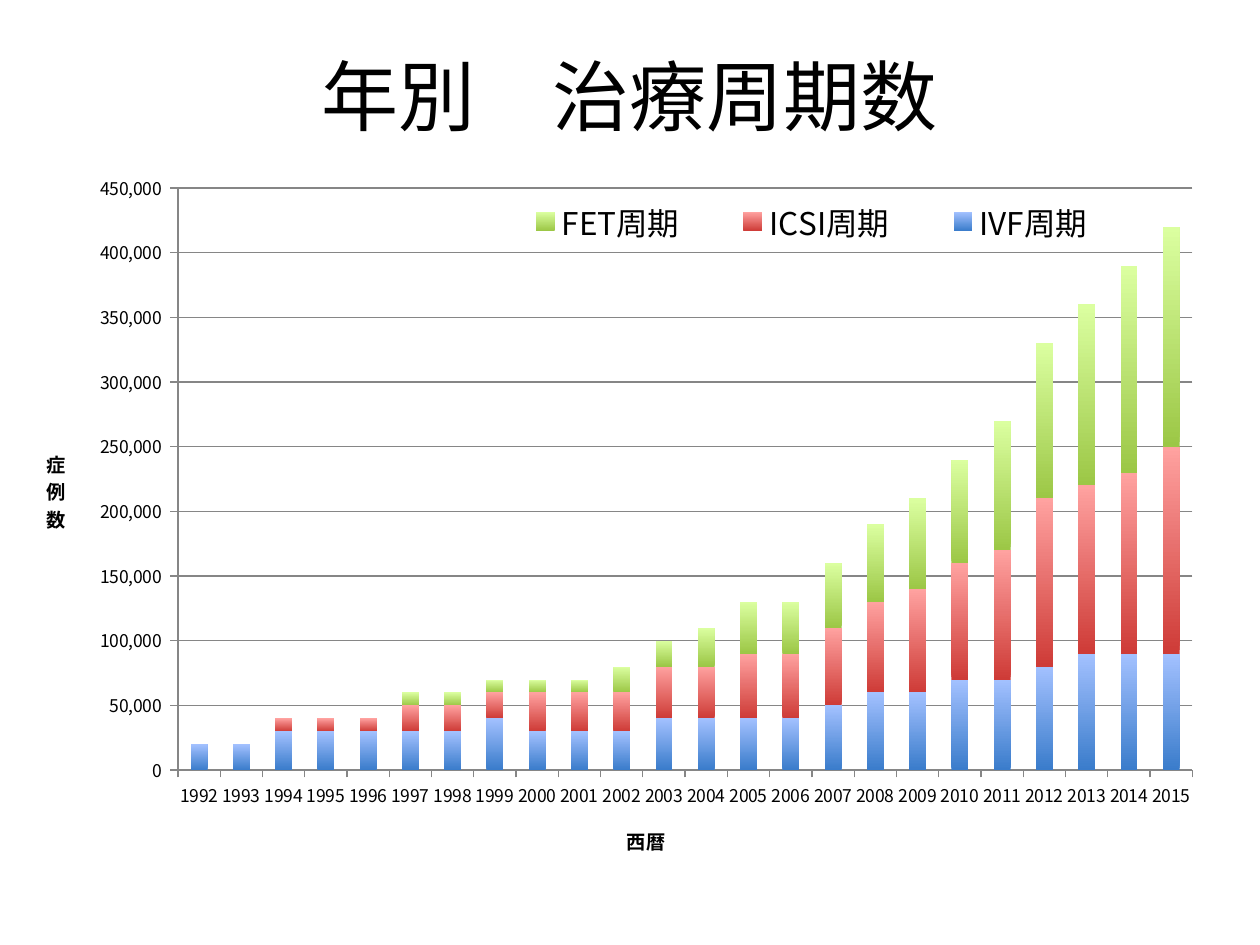
import pptx
import pptx.chart.data
import pptx.dml.color
import pptx.enum.chart
import pptx.enum.text
import pptx.oxml
import pptx.oxml.ns
import pptx.util
from lxml import etree

HEAD = "年別　治療周期数"
FACE = "Noto Sans CJK JP"
COLORS = {"text": "000000", "line": "868686"}
YEARS = [str(year) for year in range(1992, 2016)]
UNIT = 10000
SERIES = [
    ("IVF周期", "3A7CCB", "A3C1FF",
     [2, 2, 3, 3, 3, 3, 3, 4, 3, 3, 3, 4,
      4, 4, 4, 5, 6, 6, 7, 7, 8, 9, 9, 9]),
    ("ICSI周期", "CE3B37", "FFA2A0",
     [0, 0, 1, 1, 1, 2, 2, 2, 3, 3, 3, 4,
      4, 5, 5, 6, 7, 8, 9, 10, 13, 13, 14, 16]),
    ("FET周期", "9CC746", "DBFFA0",
     [0, 0, 0, 0, 0, 1, 1, 1, 1, 1, 2, 2,
      3, 4, 4, 5, 6, 7, 8, 10, 12, 14, 16, 17]),
]
TITLES = {"cat": ("西暦", 0.495, 0.947), "val": ("症例数", 0.001, 0.404)}

qn = pptx.oxml.ns.qn


def rgb(name):
    return pptx.dml.color.RGBColor.from_string(COLORS.get(name, name))


def style(font, size, bold=False):
    font.size = pptx.util.Pt(size)
    font.bold = bold
    font.name = FACE
    font.color.rgb = rgb("text")
    east = etree.SubElement(font._rPr, qn("a:ea"))
    east.set("typeface", FACE)


def place(parent, index, inner=False, **spots):
    for old in parent.findall(qn("c:layout")):
        parent.remove(old)
    layout = etree.Element(qn("c:layout"))
    manual = etree.SubElement(layout, qn("c:manualLayout"))
    if inner:
        etree.SubElement(manual, qn("c:layoutTarget")).set("val", "inner")
    for key in ("x", "y"):
        etree.SubElement(manual, qn(f"c:{key}Mode")).set("val", "edge")
    for key, spot in spots.items():
        etree.SubElement(manual, qn(f"c:{key}")).set("val", str(spot))
    parent.insert(index, layout)


def add_head(slide):
    box = slide.shapes.add_textbox(*map(pptx.util.Inches, (0.5, 0.3, 9, 0.91)))
    frame = box.text_frame
    frame.word_wrap = True
    frame.vertical_anchor = pptx.enum.text.MSO_ANCHOR.MIDDLE
    para = frame.paragraphs[0]
    para.alignment = pptx.enum.text.PP_ALIGN.CENTER
    run = para.add_run()
    run.text = HEAD
    style(run.font, 44)


def set_axis(axis, label, x, y):
    axis.format.line.color.rgb = rgb("line")
    axis.format.line.width = pptx.util.Pt(0.75)
    axis.major_tick_mark = pptx.enum.chart.XL_TICK_MARK.OUTSIDE
    style(axis.tick_labels.font, 10)
    frame = axis.axis_title.text_frame
    run = frame.paragraphs[0].add_run()
    run.text = label
    style(run.font, 11, True)
    place(axis.axis_title._element, 1, x=x, y=y)
    return frame


def add_chart(slide):
    data = pptx.chart.data.CategoryChartData()
    data.categories = YEARS
    for name, _, _, counts in SERIES:
        data.add_series(name, [count * UNIT for count in counts])
    kind = pptx.enum.chart.XL_CHART_TYPE.COLUMN_STACKED
    area = map(pptx.util.Inches, (0.33, 1.3, 9.33, 5.53))
    chart = slide.shapes.add_chart(kind, *area, data).chart
    chart.has_title = False
    chart.font.size = pptx.util.Pt(10)
    chart.font.name = "Calibri"
    chart.font.color.rgb = rgb("text")

    plot = chart.plots[0]
    plot.gap_width = 150
    plot.overlap = 100
    plot.vary_by_categories = False
    for series, (_, low, high, _) in zip(plot.series, SERIES):
        fill = series.format.fill
        fill.gradient()
        fill.gradient_angle = 90
        for stop, shade in zip(fill.gradient_stops, (low, high)):
            stop.color.rgb = rgb(shade)

    set_axis(chart.category_axis, *TITLES["cat"])
    axis = chart.value_axis
    frame = set_axis(axis, *TITLES["val"])
    body = frame._txBody.find(qn("a:bodyPr"))
    body.set("rot", "0")
    body.set("vert", "wordArtVertRtl")
    axis.minimum_scale = 0
    axis.maximum_scale = 450000
    axis.major_unit = 50000
    axis.tick_labels.number_format = r"#,##0_);[Red]\(#,##0\)"
    axis.tick_labels.number_format_is_linked = False
    axis.has_major_gridlines = True
    axis.major_gridlines.format.line.color.rgb = rgb("line")
    axis.major_gridlines.format.line.width = pptx.util.Pt(0.75)

    chart.has_legend = True
    legend = chart.legend
    legend.position = pptx.enum.chart.XL_LEGEND_POSITION.RIGHT
    legend.include_in_layout = False
    style(legend.font, 18)
    place(legend._element, 1, x=0.375, y=0.048, w=0.56, h=0.07)
    place(chart._chartSpace.chart.plotArea, 0, True,
          x=0.116, y=0.035, w=0.863, h=0.838)


def main():
    deck = pptx.Presentation()
    deck.slide_width = pptx.util.Inches(10)
    deck.slide_height = pptx.util.Inches(7.5)
    slide = deck.slides.add_slide(deck.slide_layouts[6])
    add_head(slide)
    add_chart(slide)
    deck.save("out.pptx")


if __name__ == "__main__":
    main()
